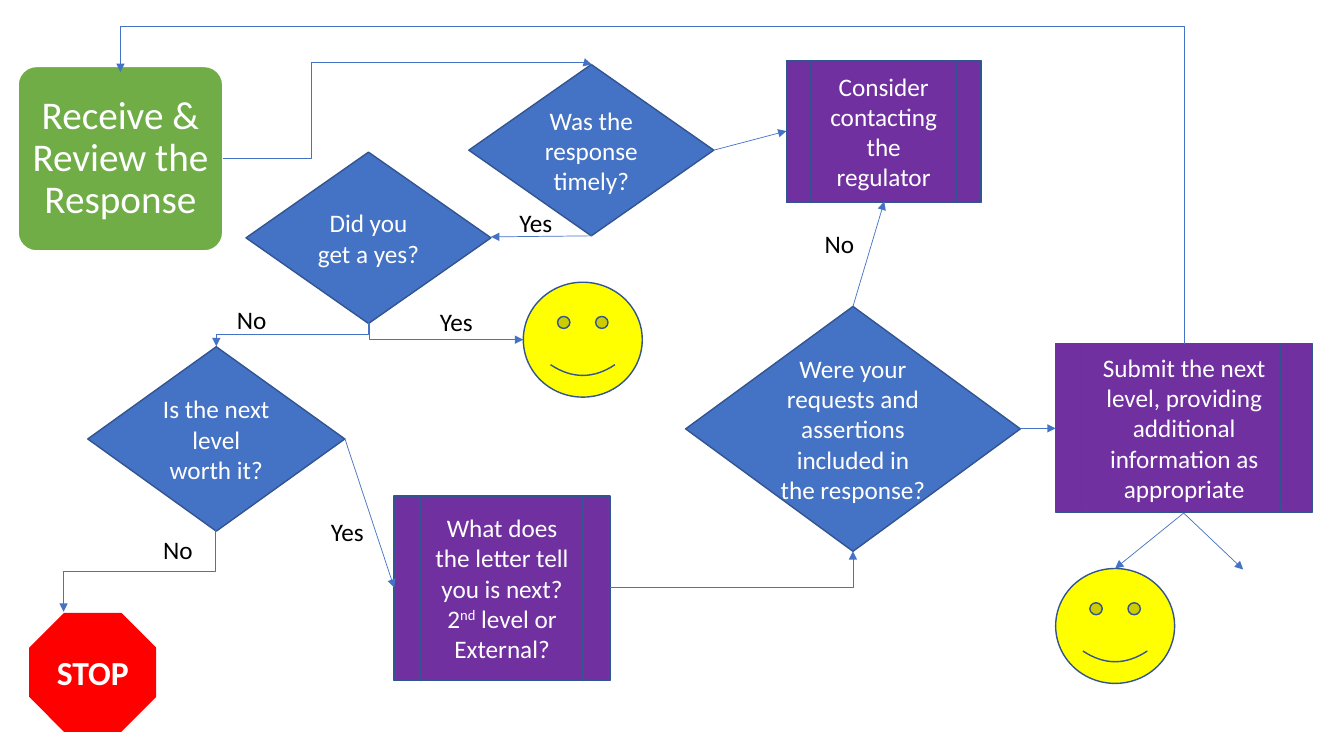
from pptx import Presentation
from pptx.dml.color import RGBColor
from pptx.enum import shapes, text
from pptx.oxml import ns
from pptx.util import Inches, Pt
from lxml import etree

WHITE = RGBColor(0xFF, 0xFF, 0xFF)
BLACK = RGBColor(0, 0, 0)
GREEN = RGBColor(0x70, 0xAD, 0x47)
BLUE = RGBColor(0x44, 0x72, 0xC4)
OUTLINE = RGBColor(0x32, 0x54, 0x91)
PURPLE = RGBColor(0x70, 0x30, 0xA0)
YELLOW = RGBColor(0xFF, 0xFF, 0)
RED = RGBColor(0xFF, 0, 0)

KIND = shapes.MSO_SHAPE
STYLES = {
    "start": (KIND.ROUNDED_RECTANGLE, GREEN, WHITE, 28, False),
    "decision": (KIND.FLOWCHART_DECISION, BLUE, OUTLINE, 18, False),
    "process": (KIND.FLOWCHART_PREDEFINED_PROCESS, PURPLE, OUTLINE, 18, False),
    "smiley": (KIND.SMILEY_FACE, YELLOW, OUTLINE, 18, False),
    "stop": (KIND.OCTAGON, RED, None, 24, True),
}

STEPS = [
    ("start", 0.18, 0.66, 2.03, 1.83, ["Receive & Review the Response"]),
    ("decision", 2.44, 1.51, 2.43, 1.7, ["Did you get a yes?"]),
    ("smiley", 5.19, 2.8, 1.18, 1.14, []),
    ("decision", 0.87, 3.44, 2.55, 1.83, ["Is the next level worth it?"]),
    ("stop", 0.29, 6.08, 1.26, 1.18, ["STOP"]),
    ("process", 3.91, 4.92, 2.14, 1.83,
     ["What does the letter tell you is next? 2", "nd", " level or External?"]),
    ("decision", 4.65, 0.64, 2.43, 1.7, ["Was the response timely?"]),
    ("process", 7.8, 0.6, 1.93, 1.41, ["Consider contacting the regulator"]),
    ("decision", 6.8, 3.04, 3.32, 2.43,
     ["Were your requests and assertions included in the response?"]),
    ("process", 10.47, 3.41, 2.55, 1.67,
     ["Submit the next level, providing additional information as appropriate"]),
    ("smiley", 10.47, 5.64, 1.18, 1.14, []),
]

ANSWERS = [
    ("Yes", 4.22, 2.99), ("No", 2.19, 2.97), ("No", 1.46, 5.25),
    ("Yes", 3.14, 5.07), ("Yes", 5.01, 2.01), ("No", 8.02, 2.22),
]

STRAIGHT_ARROWS = [
    (3.42, 4.35, 3.91, 5.83),
    (7.08, 1.49, 7.8, 1.3),
    (8.46, 3.04, 8.77, 2),
    (10.12, 4.25, 10.47, 4.25),
    (5.87, 2.34, 4.87, 2.35),
    (11.74, 5.09, 11.06, 5.64),
    (11.74, 5.09, 12.33, 5.65),
]

BENT_ARROWS = [
    (0.98, 4.91, 0.81, 1.51, 90, "", "bentConnector3", []),
    (2.78, 2.56, 0.24, 1.51, 90, "", "bentConnector3", []),
    (6.05, 5.47, 2.41, 0.36, 0, "v", "bentConnector2", []),
    (4.34, 2.52, 0.17, 1.53, 270, "h", "bentConnector2", []),
    (5.12, -3.21, 2.7, 10.55, 270, "v", "bentConnector3", [116600]),
    (2.21, 0.64, 3.66, 0.93, 0, "v", "bentConnector4", [24100, 101900]),
]


def write(box, parts, size, color, bold=False):
    para = box.text_frame.paragraphs[0]
    para.alignment = text.PP_ALIGN.CENTER
    for part in parts:
        span = para.add_run()
        span.text = part
        look = {"name": "Calibri", "size": Pt(size), "bold": bold}
        for name, value in look.items():
            setattr(span.font, name, value)
        span.font.color.rgb = color
        if part == "nd":
            span._r.get_or_add_rPr().set("baseline", "30000")
    return para


def add_arrow(kind, left, top, right, bottom):
    arrow = page.shapes.add_connector(
        kind, Inches(left), Inches(top), Inches(right), Inches(bottom))
    arrow.line.color.rgb = BLUE
    arrow.line.width = Pt(0.5)
    line = arrow.line._get_or_add_ln()
    etree.SubElement(line, ns.qn("a:tailEnd"), type="triangle")
    etree.SubElement(arrow._element.spPr, ns.qn("a:effectLst"))
    return arrow


deck = Presentation()
deck.slide_width = Inches(13.33)
deck.slide_height = Inches(7.5)
page = deck.slides.add_slide(deck.slide_layouts[6])

for style, left, top, width, height, parts in STEPS:
    kind, fill, outline, size, bold = STYLES[style]
    step = page.shapes.add_shape(
        kind, Inches(left), Inches(top), Inches(width), Inches(height))
    step.shadow.inherit = False
    step.fill.solid()
    step.fill.fore_color.rgb = fill
    if outline is None:
        step.line.fill.background()
    else:
        step.line.color.rgb = outline
        step.line.width = Pt(1)
    frame = step.text_frame
    frame.word_wrap = True
    frame.vertical_anchor = text.MSO_ANCHOR.MIDDLE
    para = write(step, parts, size, WHITE, bold)
    if style == "start":
        step.adjustments[0] = 0.1
        para.line_spacing = 0.9
        frame.margin_left = frame.margin_right = Inches(0.08)

for answer, left, top in ANSWERS:
    label = page.shapes.add_textbox(
        Inches(left), Inches(top), Inches(0.61), Inches(0.4))
    label.text_frame.word_wrap = True
    write(label, [answer], 18, BLACK)

for ends in STRAIGHT_ARROWS:
    add_arrow(shapes.MSO_CONNECTOR.STRAIGHT, *ends)

for left, top, width, height, turn, flip, preset, bends in BENT_ARROWS:
    arrow = add_arrow(
        shapes.MSO_CONNECTOR.ELBOW, left, top, left + width, top + height)
    frame = arrow._element.spPr.find(ns.qn("a:xfrm"))
    if turn:
        frame.set("rot", str(turn * 60000))
    if flip:
        frame.set("flip" + flip.upper(), "1")
    geometry = arrow._element.spPr.find(ns.qn("a:prstGeom"))
    geometry.set("prst", preset)
    guides = geometry.find(ns.qn("a:avLst"))
    for number, bend in enumerate(bends, 1):
        etree.SubElement(guides, ns.qn("a:gd"),
                         name=f"adj{number}", fmla=f"val {bend}")

deck.save("out.pptx")
